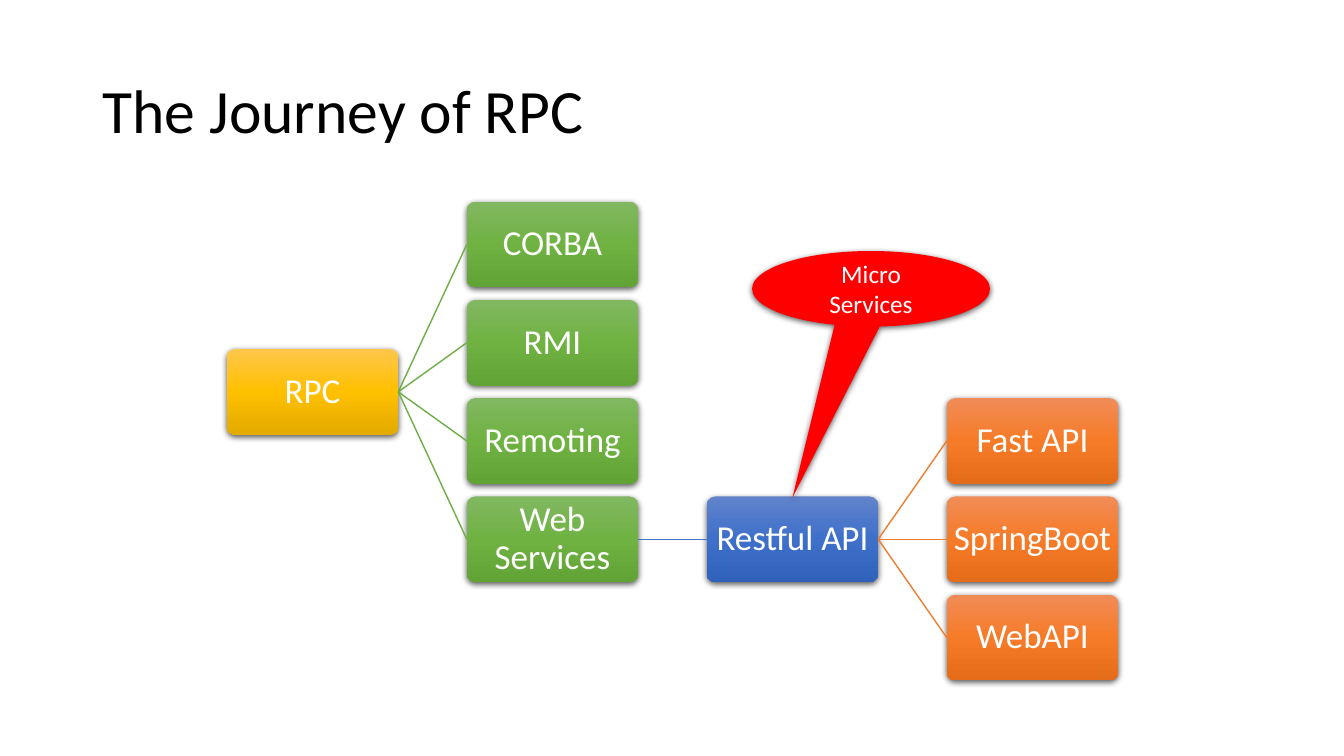
from dataclasses import dataclass

import pptx
import pptx.dml.color
import pptx.enum.shapes
import pptx.enum.text
import pptx.oxml
import pptx.oxml.ns
import pptx.util
from lxml import etree
from pptx.util import Inches

COLORS = {
    "title": "000000",
    "label": "FFFFFF",
    "callout": "FF0000",
    "shadow": "000000",
    "green_line": "70AD47",
    "blue_line": "4472C4",
    "orange_line": "ED7D31",
}
GRADIENTS = {
    "gold": ("FFC64B", "FFC000", "E3AB00"),
    "green": ("81B861", "6FB242", "62A336"),
    "blue": ("6183CB", "3E70CA", "3062BB"),
    "orange": ("F18C57", "F67B28", "E56C19"),
}
FONT = "Calibri"
LEFT, COLUMN_STEP = 2.25, 2.38
TOP, ROW_STEP = 2.0, 3.9 / 4
BOX_WIDTH, BOX_HEIGHT = 1.7, 0.85


@dataclass(frozen=True)
class Node:
    text: str
    column: int
    row: float
    gradient: str
    parent: str = ""


NODES = [
    Node("RPC", 0, 1.5, "gold"),
    Node("CORBA", 1, 0, "green", "RPC"),
    Node("RMI", 1, 1, "green", "RPC"),
    Node("Remoting", 1, 2, "green", "RPC"),
    Node("Web Services", 1, 3, "green", "RPC"),
    Node("Restful API", 2, 3, "blue", "Web Services"),
    Node("Fast API", 3, 2, "orange", "Restful API"),
    Node("SpringBoot", 3, 3, "orange", "Restful API"),
    Node("WebAPI", 3, 4, "orange", "Restful API"),
]


def rgb(name: str) -> pptx.dml.color.RGBColor:
    return pptx.dml.color.RGBColor.from_string(COLORS[name])


def sub(parent: etree._Element, tag: str, **attrs: str) -> etree._Element:
    return etree.SubElement(parent, pptx.oxml.ns.qn(tag), attrs)


def write(sp, text: str, *, size: float, color: str = "label", align: str = "CENTER",
          spacing: float = 1.0, margin_x: float = 0.1, margin_y: float = 0.05) -> None:
    tf = sp.text_frame
    tf.word_wrap = True
    tf.vertical_anchor = pptx.enum.text.MSO_ANCHOR.MIDDLE
    tf.margin_left = tf.margin_right = Inches(margin_x)
    tf.margin_top = tf.margin_bottom = Inches(margin_y)
    for i, line in enumerate(text.split("\n")):
        p = tf.add_paragraph() if i else tf.paragraphs[0]
        p.alignment = pptx.enum.text.PP_ALIGN[align]
        p.line_spacing = spacing
        r = p.add_run()
        r.text = line
        r.font.name = FONT
        r.font.size = pptx.util.Pt(size)
        r.font.color.rgb = rgb(color)


def add_shadow(sp) -> None:
    sp.shadow.inherit = False
    effects = sp._element.spPr.find(pptx.oxml.ns.qn("a:effectLst"))
    shadow = sub(effects, "a:outerShdw", blurRad=str(pptx.util.Pt(4.5)),
                 dist=str(pptx.util.Pt(1.5)), dir="5400000", algn="ctr", rotWithShape="0")
    color = sub(shadow, "a:srgbClr", val=COLORS["shadow"])
    sub(color, "a:alpha", val="63000")


def fill_gradient(sp, colors: tuple[str, ...]) -> None:
    sp.fill.gradient()
    sp.fill.gradient_angle = 270
    stops = sp._element.spPr.find(".//" + pptx.oxml.ns.qn("a:gsLst"))
    for stop in list(stops):
        stops.remove(stop)
    for i, color in enumerate(colors):
        stop = sub(stops, "a:gs", pos=str(i * 50000))
        sub(stop, "a:srgbClr", val=color)


def add_node(shapes, node: Node):
    sp = shapes.add_shape(
        pptx.enum.shapes.MSO_SHAPE.ROUNDED_RECTANGLE,
        Inches(LEFT + node.column * COLUMN_STEP), Inches(TOP + node.row * ROW_STEP),
        Inches(BOX_WIDTH), Inches(BOX_HEIGHT))
    sp.adjustments[0] = 0.1
    fill_gradient(sp, GRADIENTS[node.gradient])
    sp.line.fill.background()
    add_shadow(sp)
    write(sp, node.text, size=25, spacing=0.9, margin_x=0.04, margin_y=0.04)
    return sp


def add_link(shapes, parent, child, color: str) -> None:
    link = shapes.add_connector(pptx.enum.shapes.MSO_CONNECTOR.STRAIGHT, 0, 0, 0, 0)
    link.begin_connect(parent, 3)
    link.end_connect(child, 1)
    link.line.color.rgb = rgb(color)
    link.line.width = pptx.util.Pt(1)
    sub(link._element.spPr, "a:effectLst")


def add_callout(shapes, text: str) -> None:
    sp = shapes.add_shape(pptx.enum.shapes.MSO_SHAPE.OVAL_CALLOUT,
                          Inches(7.46), Inches(2.49), Inches(2.36), Inches(0.75))
    sp.adjustments[0] = -0.33
    sp.adjustments[1] = 2.76
    sp.fill.solid()
    sp.fill.fore_color.rgb = rgb("callout")
    sp.line.fill.background()
    add_shadow(sp)
    write(sp, text, size=18)


def main() -> None:
    prs = pptx.Presentation()
    prs.slide_width, prs.slide_height = Inches(13.33), Inches(7.5)
    shapes = prs.slides.add_slide(prs.slide_layouts[6]).shapes

    title = shapes.add_textbox(Inches(0.92), Inches(0.4), Inches(11.5), Inches(1.45))
    write(title, "The Journey of RPC", size=44, color="title", align="LEFT", spacing=0.9)

    boxes = {}
    for node in NODES:
        boxes[node.text] = add_node(shapes, node)
        if node.parent:
            add_link(shapes, boxes[node.parent], boxes[node.text], f"{node.gradient}_line")

    add_callout(shapes, "Micro\nServices")
    prs.save("out.pptx")


if __name__ == "__main__":
    main()
